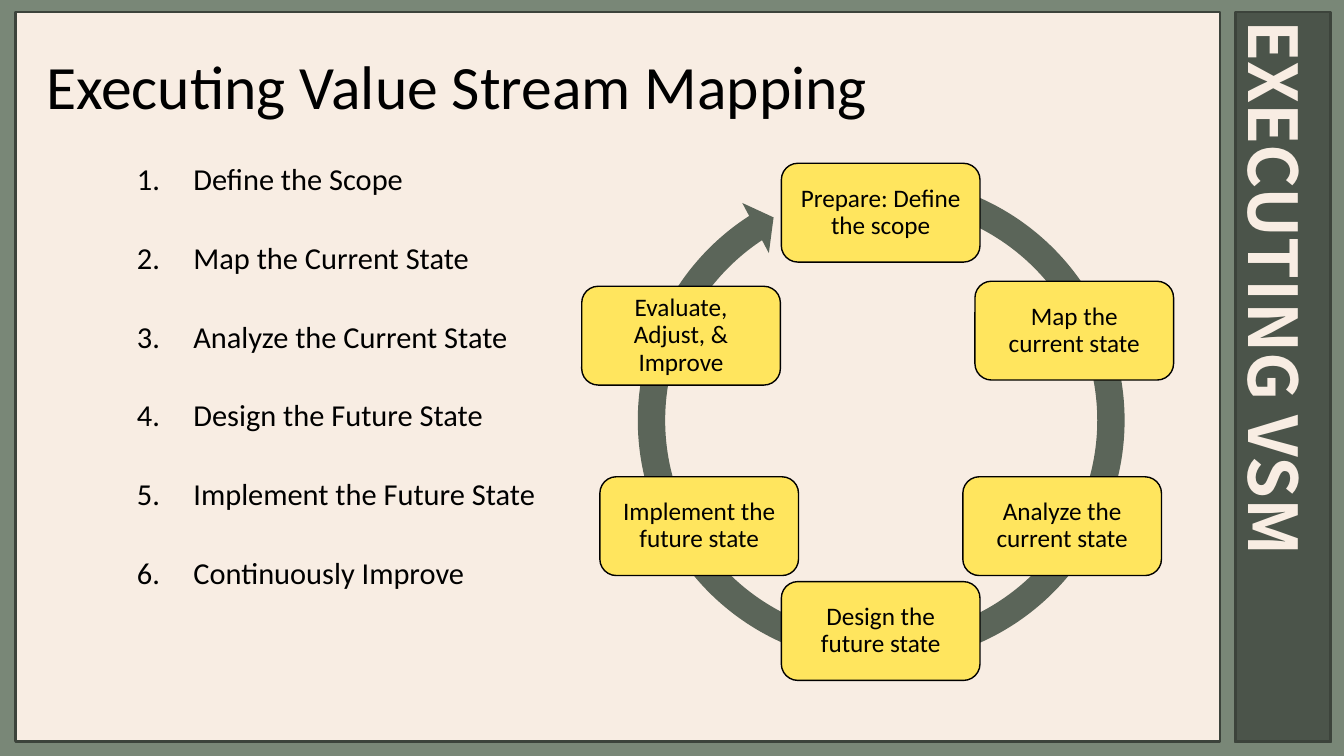
"""Build the slide on executing value stream mapping."""
import pptx
import pptx.util
import pptx.dml.color
import pptx.enum.shapes
import pptx.enum.text
import pptx.oxml.ns
import lxml.etree

RGBColor = pptx.dml.color.RGBColor
Pt = pptx.util.Pt
MSO_SHAPE = pptx.enum.shapes.MSO_SHAPE
ALIGN = pptx.enum.text.PP_ALIGN
ANCHOR = pptx.enum.text.MSO_ANCHOR
qn = pptx.oxml.ns.qn

PX = 9144
CREAM = RGBColor(0xF8, 0xED, 0xE3)
SAGE = RGBColor(0x79, 0x87, 0x77)
BAND = RGBColor(0x4B, 0x54, 0x4A)
FRAME = RGBColor(0x3C, 0x43, 0x3B)
RING = RGBColor(0x5B, 0x65, 0x59)
YELLOW = RGBColor(0xFF, 0xE5, 0x5E)
BLACK = RGBColor(0, 0, 0)

prs = pptx.Presentation()
prs.slide_width, prs.slide_height = 1333 * PX, 750 * PX
s = prs.slides.add_slide(prs.slide_layouts[6])
s.background.fill.solid()
s.background.fill.fore_color.rgb = SAGE


def add_shape(kind, box, fill, line, width):
    sp = s.shapes.add_shape(kind, *[v * PX for v in box])
    sp.shadow.inherit = False
    if fill is None:
        sp.fill.background()
    else:
        sp.fill.solid()
        sp.fill.fore_color.rgb = fill
    if line is None:
        sp.line.fill.background()
    else:
        sp.line.color.rgb = line
        sp.line.width = Pt(width)
    return sp


def add_run(p, text, size, spacing, color=BLACK, font="Calibri"):
    p.line_spacing = spacing
    r = p.add_run()
    r.text = text
    r.font.size = Pt(size)
    r.font.name = font
    r.font.color.rgb = color
    return r


for box, fill, line, width in [
    ((3, 0, 1330, 747), CREAM, SAGE, 16),
    ((1215, -5, 114, 756), BAND, SAGE, 8),
    ((2, 1, 1330, 747), None, SAGE, 16),
]:
    add_shape(MSO_SHAPE.RECTANGLE, box, fill, line, width)

divider = s.shapes.add_connector(
    pptx.enum.shapes.MSO_CONNECTOR.STRAIGHT, 1222 * PX, 11 * PX, 1222 * PX, 749 * PX)
divider.line.color.rgb = SAGE
divider.line.width = Pt(2.75)
lxml.etree.SubElement(divider._element.spPr, qn("a:effectLst"))

for left, width in [(15, 1195), (1225, 95)]:
    add_shape(MSO_SHAPE.RECTANGLE, (left, 12, width, 724), None, FRAME, 2)

side = s.shapes.add_textbox(1185 * PX, 10 * PX, 116 * PX, 728 * PX)
tf = side.text_frame
tf.word_wrap = True
tf._txBody.bodyPr.set("vert", "vert")
r = add_run(tf.paragraphs[0], "EXECUTING VSM", 48, 0.9, CREAM, "Noto Sans CJK KR")
r.font.bold = True
lxml.etree.SubElement(r.font._element, qn("a:ea")).set("typeface", "Noto Sans CJK KR")

title = s.shapes.add_textbox(36 * PX, 16 * PX, 1262 * PX, 145 * PX)
tf = title.text_frame
tf.word_wrap = True
tf.vertical_anchor = ANCHOR.MIDDLE
add_run(tf.paragraphs[0], "Executing Value Stream Mapping", 44, 0.9)

steps = s.shapes.add_textbox(126 * PX, 164 * PX, 715 * PX, 447 * PX)
tf = steps.text_frame
tf.word_wrap = True
for i, text in enumerate([
    "Define the Scope",
    "Map the Current State",
    "Analyze the Current State",
    "Design the Future State",
    "Implement the Future State",
    "Continuously Improve",
]):
    p = tf.add_paragraph() if i else tf.paragraphs[0]
    pPr = p._p.get_or_add_pPr()
    pPr.set("marL", str(56 * PX))
    pPr.set("indent", str(-56 * PX))
    lxml.etree.SubElement(pPr, qn("a:buFont")).set("typeface", "+mj-lt")
    lxml.etree.SubElement(pPr, qn("a:buAutoNum")).set("type", "arabicPeriod")
    if i:
        p.space_before = Pt(38)
    add_run(p, text, 21.7, 0.7)

ring = add_shape(MSO_SHAPE.CIRCULAR_ARROW, (618, 161, 512, 512), RING, None, 0)
for i, value in enumerate([5.3 / 100, 3.13, 142.11, 171.37, 5.5 / 100]):
    ring.adjustments[i] = value

for left, top, text in [
    (775, 162, "Prepare: Define the scope"),
    (967, 279, "Map the current state"),
    (955, 473, "Analyze the current state"),
    (775, 577, "Design the future state"),
    (595, 473, "Implement the future state"),
    (577, 284, "Evaluate, Adjust, & Improve"),
]:
    stage = add_shape(MSO_SHAPE.ROUNDED_RECTANGLE, (left, top, 197, 98), YELLOW, BLACK, 1)
    tf = stage.text_frame
    tf.word_wrap = True
    tf.vertical_anchor = ANCHOR.MIDDLE
    tf.margin_left = tf.margin_right = tf.margin_top = tf.margin_bottom = 12 * PX
    p = tf.paragraphs[0]
    p.alignment = ALIGN.CENTER
    add_run(p, text, 18, 0.9)

prs.save("out.pptx")
